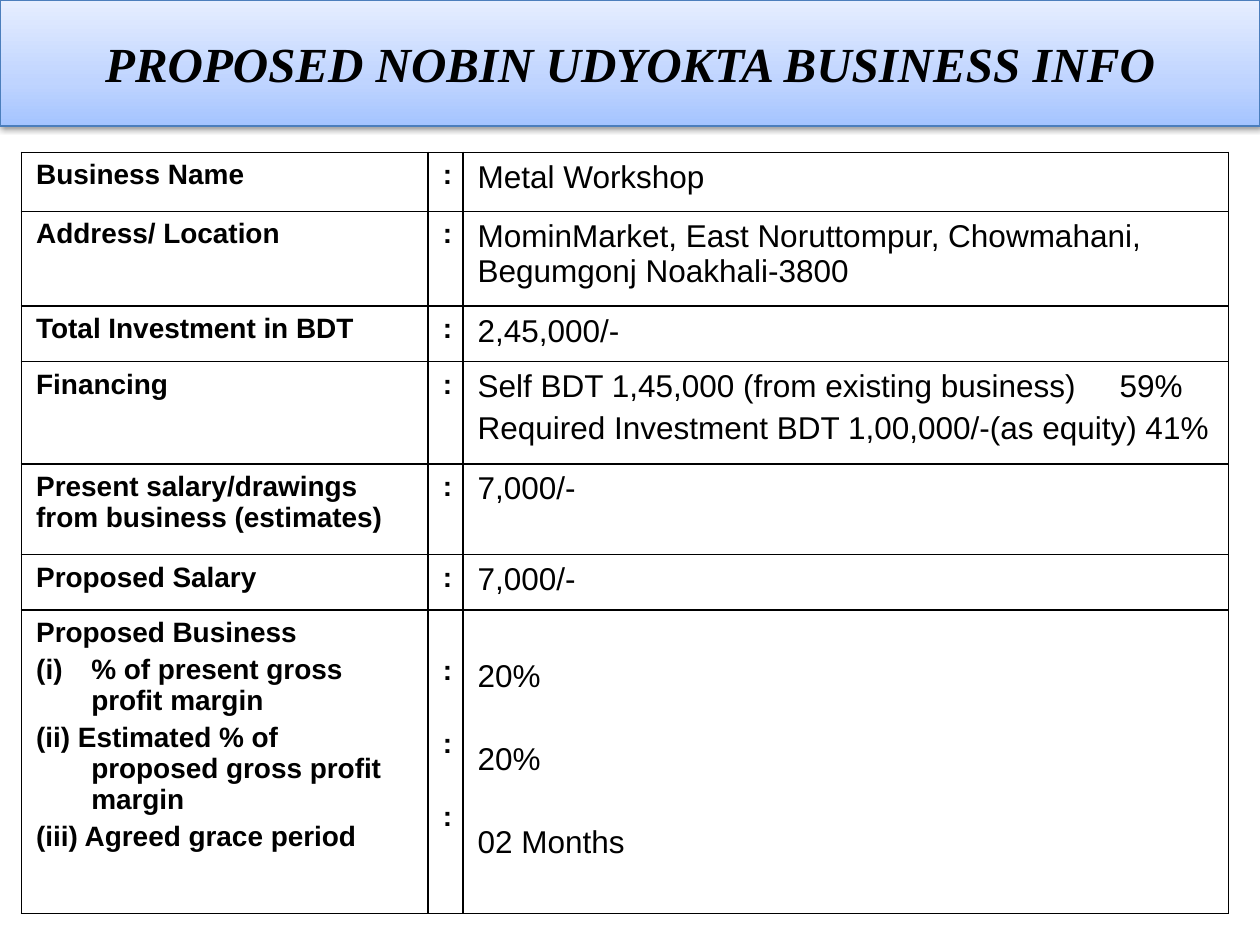
from copy import deepcopy

from lxml.etree import SubElement
from pptx import Presentation
from pptx.dml.color import RGBColor
from pptx.enum.shapes import MSO_SHAPE as Shape
from pptx.enum.text import MSO_ANCHOR as Anchor, PP_ALIGN as Align
from pptx.oxml.ns import qn
from pptx.util import Cm, Pt

BLACK = RGBColor(0, 0, 0)
BANNER_LINE = RGBColor(0x4B, 0x7E, 0xBC)
BANNER_STOPS = [
    (0, RGBColor(0xA4, 0xC4, 0xFF)),
    (0.35, RGBColor(0xBF, 0xD4, 0xFF)),
    (1, RGBColor(0xE6, 0xEE, 0xFF)),
]


def write(frame, lines, size=16, font="Arial", bold=False, italic=False,
          align=Align.LEFT, gap=0, hanging_from=None, numbered=None, tab=None):
    """Fill a text frame with one paragraph per line."""
    frame.word_wrap = True
    for i, line in enumerate(lines):
        paragraph = frame.paragraphs[0] if i == 0 else frame.add_paragraph()
        paragraph.alignment = align
        props = paragraph._p.get_or_add_pPr()
        if hanging_from is not None and i >= hanging_from:
            props.set("marL", str(Cm(1.11)))
            props.set("indent", str(-Cm(1.11)))
        if i == numbered:
            SubElement(props, qn("a:buAutoNum"), type="romanLcParenBoth")
        if tab and "\t" in line:
            stops = SubElement(props, qn("a:tabLst"))
            SubElement(stops, qn("a:tab"), pos=str(tab), algn="l")
        if i:
            paragraph.space_before = Pt(gap)
        run = paragraph.add_run()
        run.text = line
        run.font.name, run.font.size = font, Pt(size)
        run.font.bold, run.font.italic = bold, italic
        run.font.color.rgb = BLACK


def draw_borders(cell):
    """Give a cell a thin black line on each side."""
    props = cell._tc.get_or_add_tcPr()
    for i, side in enumerate(("lnL", "lnR", "lnT", "lnB")):
        line = props.makeelement(qn(f"a:{side}"), {"w": str(Pt(1))})
        fill = SubElement(line, qn("a:solidFill"))
        SubElement(fill, qn("a:srgbClr"), val=str(BLACK))
        props.insert(i, line)


prs = Presentation()
prs.slide_width, prs.slide_height = Cm(25.4), Cm(19.05)
slide = prs.slides.add_slide(prs.slide_layouts[6])

# Title banner with gradient and soft shadow
banner = slide.shapes.add_shape(Shape.RECTANGLE, 0, 0, prs.slide_width, Cm(2.54))
banner.line.color.rgb = BANNER_LINE
banner.line.width = Pt(0.75)
banner.fill.gradient()
banner.fill.gradient_angle = 90
stop_list = banner._element.spPr.find(".//" + qn("a:gsLst"))
stop_list.append(deepcopy(stop_list[0]))
for stop, (position, color) in zip(banner.fill.gradient_stops, BANNER_STOPS):
    stop.position = position
    stop.color.rgb = color
banner.shadow.inherit = False
effects = banner._element.spPr.find(qn("a:effectLst"))
shadow = SubElement(effects, qn("a:outerShdw"), blurRad=str(Pt(3.1)),
                    dist=str(Pt(1.6)), dir="5400000", rotWithShape="0")
shadow_color = SubElement(shadow, qn("a:srgbClr"), val=str(BLACK))
SubElement(shadow_color, qn("a:alpha"), val="38000")
banner.text_frame.vertical_anchor = Anchor.MIDDLE
write(banner.text_frame, ["PROPOSED NOBIN UDYOKTA BUSINESS INFO"], size=28,
      font="Times New Roman", bold=True, italic=True, align=Align.CENTER)

# Business facts: row height in cm, label lines, value lines
facts = [
    (1.19, ["Business Name"], ["Metal Workshop"]),
    (1.91, ["Address/ Location"],
     ["MominMarket, East Noruttompur, Chowmahani, Begumgonj Noakhali-3800"]),
    (1.12, ["Total Investment in BDT"], ["2,45,000/-"]),
    (2.06, ["Financing"],
     ["Self BDT 1,45,000 (from existing business)\t59%",
      "Required Investment BDT 1,00,000/-(as equity) 41%"]),
    (1.83, ["Present salary/drawings from business (estimates)"], ["7,000/-"]),
    (1.12, ["Proposed Salary"], ["7,000/-"]),
    (6.12,
     ["Proposed Business",
      "% of present gross profit margin",
      "(ii) Estimated % of proposed gross profit margin",
      "(iii) Agreed grace period"],
     ["20%", "20%", "02 Months"]),
]
column_widths = [8.2, 0.69, 15.44]

table = slide.shapes.add_table(
    len(facts), len(column_widths), Cm(0.43), Cm(3.07),
    Cm(sum(column_widths)), Cm(sum(height for height, _, _ in facts))).table
table.first_row = table.horz_banding = False
for column, width in zip(table.columns, column_widths):
    column.width = Cm(width)

for row, (height, labels, values) in zip(table.rows, facts):
    row.height = Cm(height)
    for cell in row.cells:
        cell.fill.background()
        cell.margin_left = cell.margin_right = Cm(0.3)
        cell.margin_top = cell.margin_bottom = Cm(0.15)
        draw_borders(cell)
    label, colon, value = row.cells
    if len(labels) > 1:
        # Three terms, spaced to stand beside the numbered labels
        colon.margin_top, value.margin_top = Cm(0.9), Cm(0.98)
        write(label.text_frame, labels, bold=True, gap=3.2,
              hanging_from=1, numbered=1)
        write(colon.text_frame, [":"] * len(values), bold=True, gap=24.2)
        write(value.text_frame, values, size=18, gap=27.2)
    else:
        write(label.text_frame, labels, bold=True)
        write(colon.text_frame, [":"], bold=True)
        write(value.text_frame, values, size=18, gap=3.6, tab=Cm(12.94))

prs.save("out.pptx")
